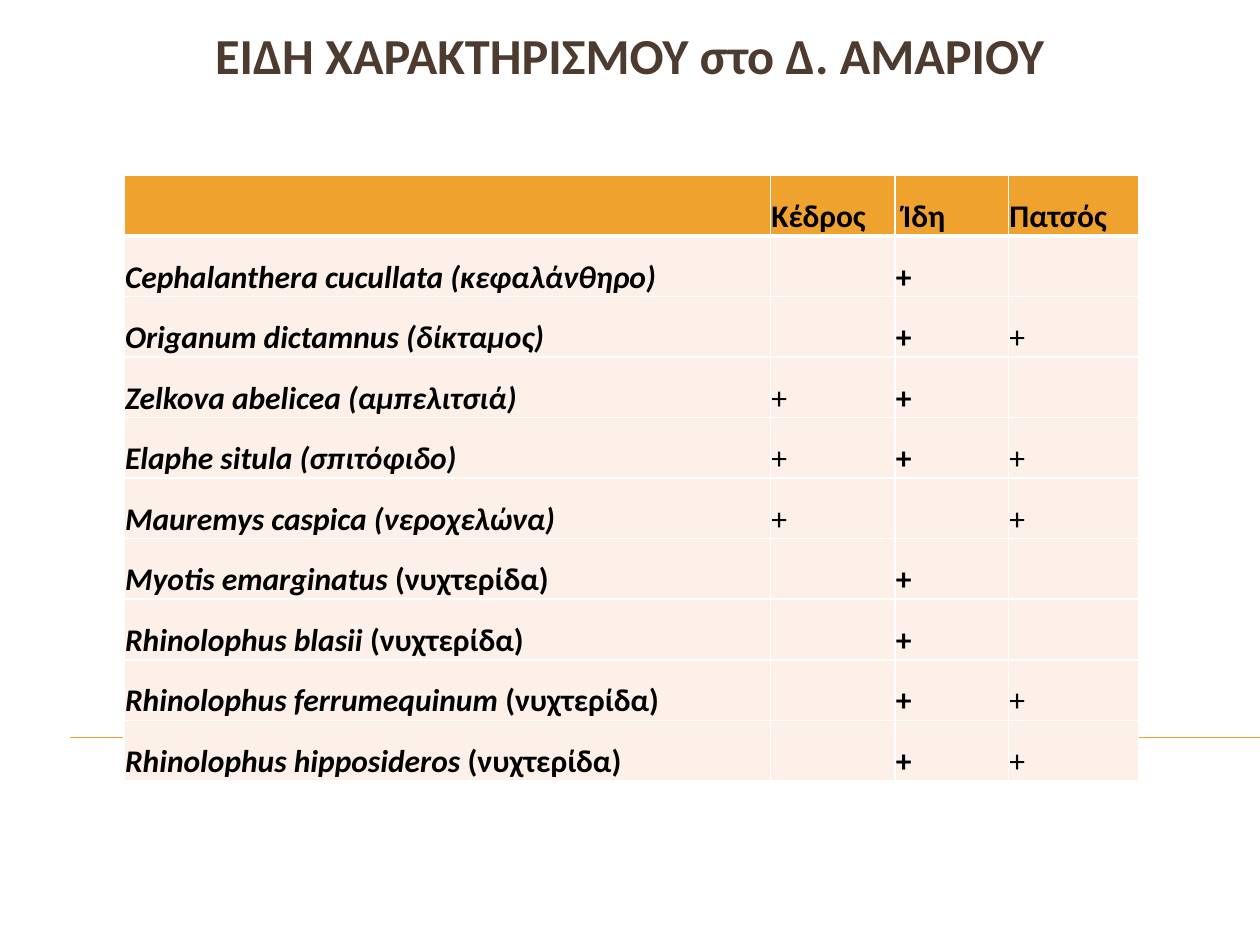
"""Build a slide with a table of the protected species found at each site."""
from dataclasses import dataclass

from lxml import etree
from pptx import Presentation
from pptx.dml.color import RGBColor
from pptx.enum.shapes import MSO_CONNECTOR
from pptx.enum.text import MSO_ANCHOR, PP_ALIGN
from pptx.oxml.ns import qn
from pptx.util import Cm, Pt

STRAIGHT = MSO_CONNECTOR.STRAIGHT
TOP, BOTTOM = MSO_ANCHOR.TOP, MSO_ANCHOR.BOTTOM
CENTER = PP_ALIGN.CENTER

ORANGE = RGBColor(0xF0, 0xA2, 0x2E)
CREAM = RGBColor(0xFC, 0xF0, 0xE8)
BROWN = RGBColor(0x4E, 0x3B, 0x30)
BLACK = RGBColor(0, 0, 0)
WHITE = RGBColor(0xFF, 0xFF, 0xFF)
FONT = "Calibri"

SITES = ("Κέδρος", " Ίδη", "Πατσός")
IDI = 1
COL_WIDTHS = (13.03, 2.51, 2.29, 2.62)
ROW_HEIGHT = 1.22


@dataclass(frozen=True)
class Species:
    """A species, its common name and the indexes of its sites."""
    latin: str
    common: str
    sites: tuple[int, ...]
    italic_common: bool = False


SPECIES = (
    Species("Cephalanthera cucullata", "κεφαλάνθηρο", (1,), True),
    Species("Origanum dictamnus", "δίκταμος", (1, 2), True),
    Species("Zelkova abelicea", "αμπελιτσιά", (0, 1), True),
    Species("Elaphe situla", "σπιτόφιδο", (0, 1, 2), True),
    Species("Mauremys caspica", "νεροχελώνα", (0, 2), True),
    Species("Myotis emarginatus", "νυχτερίδα", (1,)),
    Species("Rhinolophus blasii", "νυχτερίδα", (1,)),
    Species("Rhinolophus ferrumequinum", "νυχτερίδα", (1, 2)),
    Species("Rhinolophus hipposideros", "νυχτερίδα", (1, 2)),
)


def add_run(p, text: str, *, size: float = 18, color: RGBColor = BLACK,
            bold: bool = True, italic: bool = False) -> None:
    """Append formatted text to a paragraph."""
    r = p.add_run()
    r.text = text
    r.font.name, r.font.size = FONT, Pt(size)
    r.font.bold, r.font.italic = bold, italic
    r.font.color.rgb = color


def style_cell(cell, fill: RGBColor, top: float = 1, bottom: float = 1) -> None:
    """Set the margins, white borders and fill of a cell."""
    cell.vertical_anchor = BOTTOM
    cell.margin_left = cell.margin_right = cell.margin_top = Cm(0.02)
    cell.margin_bottom = 0
    tc_pr = cell._tc.get_or_add_tcPr()
    for side, width in (("L", 1), ("R", 1), ("T", top), ("B", bottom)):
        ln = etree.SubElement(tc_pr, qn(f"a:ln{side}"), w=str(Pt(width)))
        solid = etree.SubElement(ln, qn("a:solidFill"))
        etree.SubElement(solid, qn("a:srgbClr"), val=str(WHITE))
    cell.fill.solid()
    cell.fill.fore_color.rgb = fill


def add_rule(s) -> None:
    """Draw the thin orange line behind the table."""
    line = s.shapes.add_connector(STRAIGHT, Cm(1.42), Cm(14.86), Cm(25.4), Cm(14.86))
    line.line.color.rgb = ORANGE
    line.line.width = Pt(0.75)
    etree.SubElement(line._element.spPr, qn("a:effectLst"))


def add_species_table(s) -> None:
    """Add the table with one row for each species."""
    rows = len(SPECIES) + 1
    table = s.shapes.add_table(rows, len(COL_WIDTHS), Cm(2.5), Cm(3.54),
                               Cm(sum(COL_WIDTHS)), Cm(rows * ROW_HEIGHT)).table
    for column, width in zip(table.columns, COL_WIDTHS):
        column.width = Cm(width)
    for i, row in enumerate(table.rows):
        row.height = Cm(ROW_HEIGHT)
        for cell in row.cells:
            style_cell(cell, CREAM if i else ORANGE,
                       top=3 if i == 1 else 1, bottom=1 if i else 3)
    for col, site in enumerate(SITES, 1):
        add_run(table.cell(0, col).text_frame.paragraphs[0], site)
    for i, species in enumerate(SPECIES, 1):
        p = table.cell(i, 0).text_frame.paragraphs[0]
        add_run(p, species.latin, italic=True)
        add_run(p, f" ({species.common})", italic=species.italic_common)
        for site in species.sites:
            p = table.cell(i, site + 1).text_frame.paragraphs[0]
            add_run(p, "+", bold=site == IDI)


def add_title(s) -> None:
    """Add the centred title across the slide."""
    sp = s.shapes.add_textbox(0, Cm(0.33), Cm(25.4), Cm(1.4))
    tf = sp.text_frame
    tf.word_wrap = True
    tf.vertical_anchor = TOP
    tf.margin_top = Cm(0.15)
    p = tf.paragraphs[0]
    p.alignment = CENTER
    add_run(p, "ΕΙΔΗ ΧΑΡΑΚΤΗΡΙΣΜΟΥ στο Δ. ΑΜΑΡΙΟΥ", size=28.8, color=BROWN)


def main() -> None:
    """Build and save the slide."""
    prs = Presentation()
    prs.slide_width, prs.slide_height = Cm(25.4), Cm(19.05)
    s = prs.slides.add_slide(prs.slide_layouts[6])
    add_rule(s)
    add_species_table(s)
    add_title(s)
    prs.save("out.pptx")


if __name__ == "__main__":
    main()
